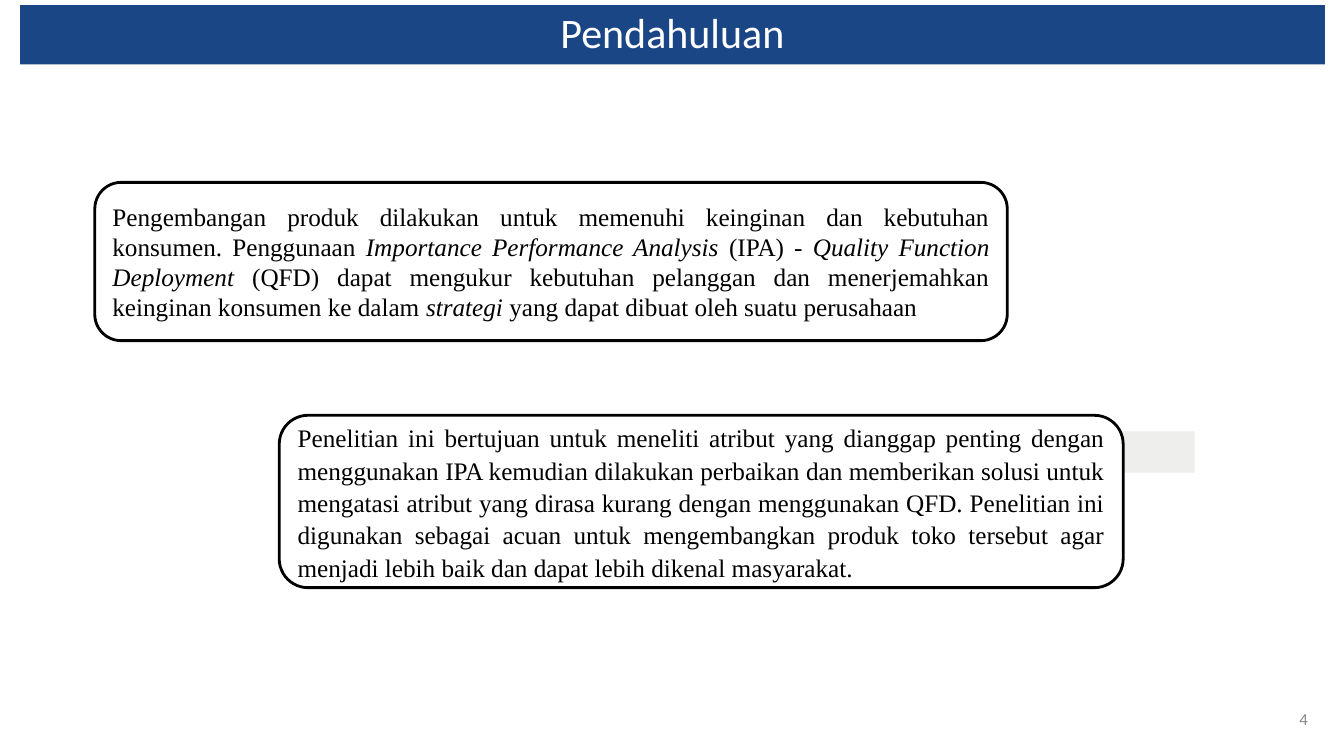
import pptx
import pptx.util
import pptx.dml.color
import pptx.enum.shapes
import pptx.enum.text

Inches = pptx.util.Inches
Pt = pptx.util.Pt
RGBColor = pptx.dml.color.RGBColor
SHAPES = pptx.enum.shapes.MSO_SHAPE
ALIGN = pptx.enum.text.PP_ALIGN
ANCHOR = pptx.enum.text.MSO_ANCHOR

BLUE = RGBColor(0x1B, 0x46, 0x85)
PALE_GREY = RGBColor(0xEE, 0xEE, 0xEC)
NUMBER_GREY = RGBColor(0x88, 0x88, 0x88)
BLACK = RGBColor(0, 0, 0)
WHITE = RGBColor(0xFF, 0xFF, 0xFF)

BACKGROUND_SPANS = [
    ("Pengembangan produk dilakukan untuk memenuhi keinginan dan kebutuhan "
     "konsumen. Penggunaan ", False),
    ("Importance Performance Analysis ", True),
    ("(IPA) - ", False),
    ("Quality Function Deployment ", True),
    ("(QFD) dapat mengukur kebutuhan pelanggan dan menerjemahkan keinginan "
     "konsumen ke dalam ", False),
    ("strategi", True),
    (" yang dapat dibuat oleh suatu perusahaan", False),
]
PURPOSE_SPANS = [
    ("Penelitian ini bertujuan untuk meneliti atribut yang dianggap penting "
     "dengan menggunakan IPA kemudian dilakukan perbaikan dan memberikan "
     "solusi untuk mengatasi atribut yang dirasa kurang dengan menggunakan "
     "QFD. Penelitian ini digunakan sebagai acuan untuk mengembangkan produk "
     "toko tersebut agar menjadi lebih baik dan dapat lebih dikenal masyarakat.",
     False),
]


def inches(*lengths):
    return [Inches(length) for length in lengths]


def set_font(para, name, size, color):
    para.font.name = name
    para.font.size = Pt(size)
    para.font.color.rgb = color


def fill_solid(shape, color):
    shape.fill.solid()
    shape.fill.fore_color.rgb = color


def add_title(page, text):
    title = page.shapes.title
    title.left, title.top, title.width, title.height = inches(0.2, 0.05, 12.94, 0.59)
    fill_solid(title, BLUE)
    frame = title.text_frame
    frame.text = text
    frame.auto_size = pptx.enum.text.MSO_AUTO_SIZE.NONE
    frame.vertical_anchor = ANCHOR.MIDDLE
    para = frame.paragraphs[0]
    para.alignment = ALIGN.CENTER
    para.line_spacing = 0.9
    set_font(para, "Calibri", 30, WHITE)


def add_block(page, kind, place, color):
    block = page.shapes.add_shape(kind, *inches(*place))
    block.shadow.inherit = False
    fill_solid(block, color)
    block.line.fill.background()
    return block


def add_text_card(page, place, spans):
    card = add_block(page, SHAPES.ROUNDED_RECTANGLE, place, WHITE)
    card.line.color.rgb = BLACK
    card.line.width = Pt(2)
    frame = card.text_frame
    frame.word_wrap = True
    frame.vertical_anchor = ANCHOR.MIDDLE
    para = frame.paragraphs[0]
    para.alignment = ALIGN.JUSTIFY
    set_font(para, "Times New Roman", 18, BLACK)
    for text, italic in spans:
        span = para.add_run()
        span.text = text
        if italic:
            span.font.italic = True
    return para


def add_page_number(page, number):
    box = page.shapes.add_textbox(*inches(12.5, 6.93, 0.57, 0.4))
    frame = box.text_frame
    frame.word_wrap = True
    frame.vertical_anchor = ANCHOR.MIDDLE
    frame.text = number
    para = frame.paragraphs[0]
    para.alignment = ALIGN.RIGHT
    set_font(para, "Calibri", 12, NUMBER_GREY)


def main():
    deck = pptx.Presentation()
    deck.slide_width, deck.slide_height = inches(13.33, 7.5)
    page = deck.slides.add_slide(deck.slide_layouts[5])
    add_title(page, "Pendahuluan")
    add_page_number(page, "4")
    add_block(page, SHAPES.RECTANGLE, (3.75, 4.28, 8.1, 0.41), PALE_GREY)
    add_text_card(page, (0.94, 1.81, 9.05, 1.57), BACKGROUND_SPANS)
    purpose = add_text_card(page, (2.77, 4.12, 8.37, 1.71), PURPOSE_SPANS)
    purpose.line_spacing = 1.07
    purpose.space_after = Pt(8)
    deck.save("out.pptx")


if __name__ == "__main__":
    main()
